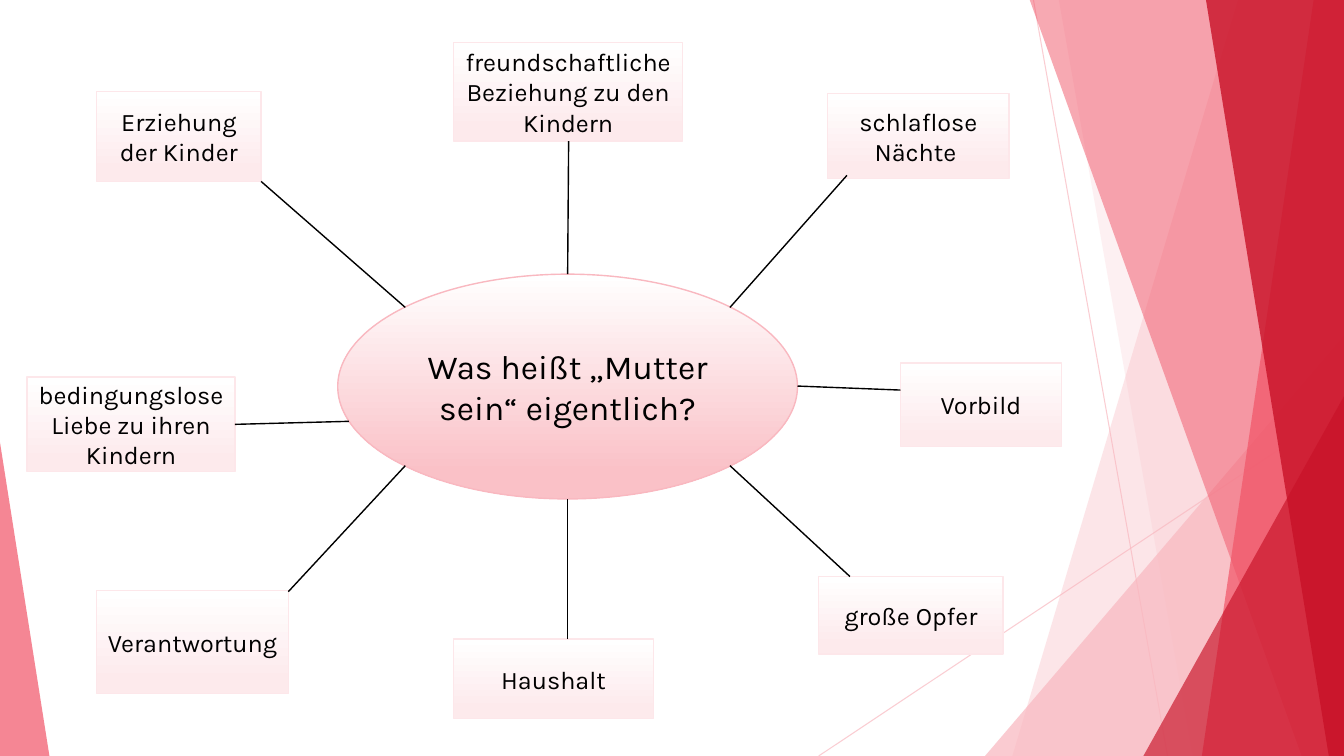
from dataclasses import dataclass

from lxml import etree
from pptx import Presentation
from pptx import util as u
from pptx.dml.color import RGBColor
from pptx.enum import shapes, text
from pptx.oxml.ns import qn


@dataclass(frozen=True)
class Theme:
    font: str = "Karla"
    ink: str = "000000"
    white: str = "FFFFFF"
    blush: str = "F9B8C0"
    coral: str = "F15467"
    crimson: str = "C81127"
    centre_fill: str = "FAC1C7"
    idea_fill: str = "FDEAEC"
    idea_edge: str = "FDE7EA"
    centre_size: int = 24
    idea_size: int = 18


class MindMap:
    PX = 9144  # 100 px to the inch

    def __init__(self, slide, theme):
        self.shapes = slide.shapes
        self.theme = theme

    def px(self, *lengths):
        return [u.Emu(length * self.PX) for length in lengths]

    def set_alpha(self, shape, percent):
        for colour in shape.element.spPr.iter(qn("a:srgbClr")):
            alpha = etree.SubElement(colour, qn("a:alpha"))
            alpha.set("val", str(percent * 1000))

    def tint(self, shape, colour, alpha):
        shape.shadow.inherit = False
        shape.fill.solid()
        shape.fill.fore_color.rgb = RGBColor.from_string(colour)
        shape.line.fill.background()
        self.set_alpha(shape, alpha)

    def facet(self, points, colour, alpha):
        builder = self.shapes.build_freeform(*points[0], scale=self.PX)
        builder.add_line_segments(points[1:], close=True)
        self.tint(builder.convert_to_shape(), colour, alpha)

    def triangle(self, box, apex, colour, alpha):
        kind = shapes.MSO_SHAPE.ISOSCELES_TRIANGLE
        shape = self.shapes.add_shape(kind, *self.px(*box))
        shape.adjustments[0] = apex
        self.tint(shape, colour, alpha)

    def line(self, start, end, colour, width=1, alpha=None):
        kind = shapes.MSO_CONNECTOR.STRAIGHT
        line = self.shapes.add_connector(kind, *self.px(*start, *end))
        line.line.width = u.Pt(width)
        line.line.color.rgb = RGBColor.from_string(colour)
        if alpha:
            self.set_alpha(line, alpha)
        etree.SubElement(line.element.spPr, qn("a:effectLst"))

    def bubble(self, kind, box, words, size, fill, edge):
        shape = self.shapes.add_shape(kind, *self.px(*box))
        shape.shadow.inherit = False
        shape.fill.gradient()
        shape.fill.gradient_angle = 270
        stops = zip(shape.fill.gradient_stops, (0, 0.88), (self.theme.white, fill))
        for stop, position, colour in stops:
            stop.position = position
            stop.color.rgb = RGBColor.from_string(colour)
        shape.line.color.rgb = RGBColor.from_string(edge)
        shape.line.width = u.Pt(1)
        frame = shape.text_frame
        frame.word_wrap = True
        frame.vertical_anchor = text.MSO_ANCHOR.MIDDLE
        frame.text = words
        paragraph = frame.paragraphs[0]
        paragraph.alignment = text.PP_ALIGN.CENTER
        font = paragraph.runs[0].font
        font.name = self.theme.font
        font.size = u.Pt(size)
        font.color.rgb = RGBColor.from_string(self.theme.ink)


THEME = Theme()
WIDTH, HEIGHT = 1333, 750

# Right-hand facets: top x, bottom x, colour, opacity
FACETS = [
    (1228, 1004, THEME.blush, 36),
    (1050, 1183, THEME.blush, 20),
    (1021, 1291, THEME.coral, 50),
    (1303, 1192, THEME.coral, 70),
    (1196, 1318, THEME.crimson, 80),
]

# Ideas: box, words, then the spoke's ends at the idea and at the centre
IDEAS = [
    ((96, 91, 163, 89), "Erziehung der Kinder", (259, 180), (402, 305)),
    ((27, 374, 206, 94), "bedingungslose Liebe zu ihren Kindern", (233, 421), (346, 418)),
    ((450, 42, 227, 98), "freundschaftliche Beziehung zu den Kindern", (564, 140), (563, 272)),
    ((821, 93, 180, 84), "schlaflose Nächte ", (840, 174), (724, 305)),
    ((96, 586, 190, 102), "Verantwortung", (286, 587), (402, 462)),
    ((893, 360, 160, 83), "Vorbild", (893, 387), (791, 383)),
    ((450, 634, 198, 79), "Haushalt", (563, 634), (563, 495)),
    ((812, 572, 183, 77), "große Opfer", (843, 572), (724, 462)),
]


def main():
    deck = Presentation()
    deck.slide_width, deck.slide_height = (u.Emu(n * MindMap.PX) for n in (WIDTH, HEIGHT))
    mind_map = MindMap(deck.slides.add_slide(deck.slide_layouts[6]), THEME)

    # Background decoration
    mind_map.line((1025, 0), (1158, HEIGHT), THEME.blush, 0.75, 70)
    mind_map.line((WIDTH, 403), (812, HEIGHT), THEME.blush, 0.75, 70)
    for index, (top, bottom, colour, alpha) in enumerate(FACETS):
        if index == 2:
            mind_map.triangle((977, 333, 356, 417), 1, THEME.blush, 72)
        corners = [(top, -1), (WIDTH, -1), (WIDTH, HEIGHT), (bottom, HEIGHT)]
        mind_map.facet(corners, colour, alpha)
    mind_map.triangle((1134, 393, 199, 357), 1, THEME.crimson, 66)
    mind_map.triangle((0, 439, 49, 311), 0, THEME.coral, 70)

    # Central question
    mind_map.bubble(shapes.MSO_SHAPE.OVAL, (335, 272, 456, 223),
                    "Was heißt „Mutter sein“ eigentlich?",
                    THEME.centre_size, THEME.centre_fill, THEME.blush)

    # Ideas and their spokes
    for box, words, outer, inner in IDEAS:
        mind_map.bubble(shapes.MSO_SHAPE.RECTANGLE, box, words,
                        THEME.idea_size, THEME.idea_fill, THEME.idea_edge)
        mind_map.line(outer, inner, THEME.ink)

    deck.save("out.pptx")


if __name__ == "__main__":
    main()
